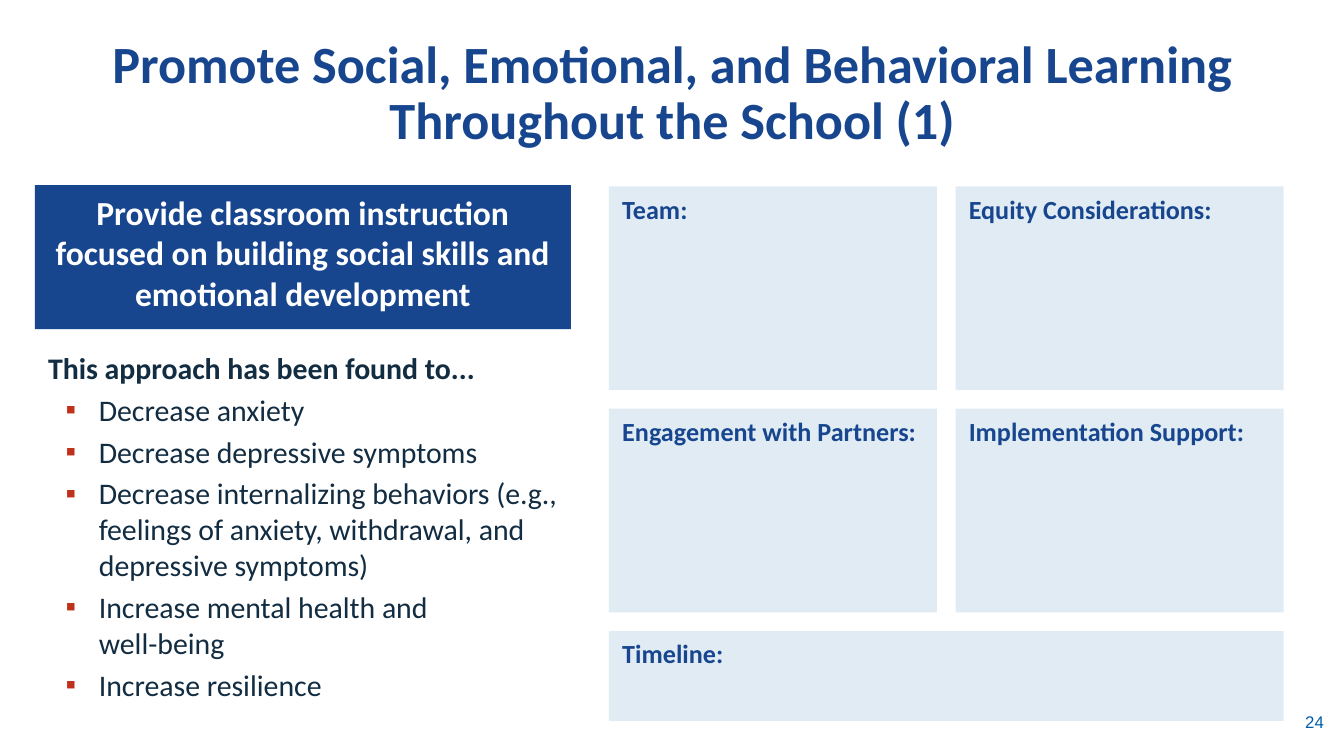
from lxml import etree
from pptx import Presentation
from pptx.dml.color import RGBColor
from pptx.enum.shapes import MSO_SHAPE
from pptx.enum.text import MSO_ANCHOR, PP_ALIGN
from pptx.oxml.ns import qn
from pptx.util import Cm, Pt

RECT = MSO_SHAPE.RECTANGLE
TOP, BOTTOM = MSO_ANCHOR.TOP, MSO_ANCHOR.BOTTOM
LEFT, CENTER, RIGHT = PP_ALIGN.LEFT, PP_ALIGN.CENTER, PP_ALIGN.RIGHT


def color(hex_code):
    return RGBColor.from_string(hex_code)


def write(p, text, size=16, fill="122C41", bold=False, font="Calibri",
          align=LEFT, before=0, spacing=None):
    p.text = text
    p.alignment = align
    p.space_before = Pt(before)
    if spacing:
        p.line_spacing = Pt(spacing)
    for r in p.runs:
        r.font.name, r.font.size, r.font.bold = font, Pt(size), bold
        r.font.color.rgb = color(fill)


class SlideBuilder:
    NAVY, WHITE, RED, SKY, BLUE = "17468F", "FFFFFF", "BF311B", "86B2D7", "015DAA"

    def __init__(self, prs):
        self.slide = prs.slides.add_slide(prs.slide_layouts[6])

    def fill_frame(self, sp, text, anchor=TOP, **fmt):
        tf = sp.text_frame
        tf.word_wrap = True
        tf.vertical_anchor = anchor
        write(tf.paragraphs[0], text, **fmt)
        return tf

    def text(self, x, y, w, h, text, **fmt):
        sp = self.slide.shapes.add_textbox(Cm(x), Cm(y), Cm(w), Cm(h))
        return self.fill_frame(sp, text, **fmt)

    def box(self, x, y, w, h, text, back, opacity=100, **fmt):
        sp = self.slide.shapes.add_shape(RECT, Cm(x), Cm(y), Cm(w), Cm(h))
        sp.shadow.inherit = False
        sp.line.fill.background()
        sp.fill.solid()
        sp.fill.fore_color.rgb = color(back)
        if opacity < 100:
            clr = sp._element.spPr.find(qn("a:solidFill"))[0]
            etree.SubElement(clr, qn("a:alpha"), val=str(opacity * 1000))
        return self.fill_frame(sp, text, **fmt)

    def panel(self, x, y, w, h, label):
        self.box(x, y, w, h, label, self.SKY, opacity=25,
                 size=14, fill=self.NAVY, bold=True)

    def bullet(self, tf, text):
        p = tf.add_paragraph()
        pPr = p._p.get_or_add_pPr()
        pPr.set("marL", str(Cm(0.96)))
        pPr.set("indent", str(Cm(-0.63)))
        bu_clr = etree.SubElement(pPr, qn("a:buClr"))
        etree.SubElement(bu_clr, qn("a:srgbClr"), val=self.RED)
        etree.SubElement(pPr, qn("a:buFont"), typeface="Arial")
        etree.SubElement(pPr, qn("a:buChar"), char="▪")
        write(p, text, before=3.2)


def main():
    prs = Presentation()
    prs.slide_width, prs.slide_height = Cm(25.4), Cm(14.28)
    s = SlideBuilder(prs)

    # Title
    s.text(0.71, 0.56, 23.98, 2.39,
           "Promote Social, Emotional, and Behavioral Learning "
           "Throughout the School (1)",
           anchor=BOTTOM, size=28, fill=s.NAVY, bold=True, align=CENTER,
           spacing=30)

    # Approach banner
    s.box(0.66, 3.5, 10.13, 2.72,
          "Provide classroom instruction focused on building social skills "
          "and emotional development",
          s.NAVY, size=18, fill=s.WHITE, bold=True, align=CENTER)

    # Findings
    findings = s.text(0.66, 6.48, 10.13, 7.14,
                      "This approach has been found to...", bold=True)
    for item in ("Decrease anxiety",
                 "Decrease depressive symptoms",
                 "Decrease internalizing behaviors (e.g., feelings of anxiety, "
                 "withdrawal, and depressive symptoms)",
                 "Increase mental health and \nwell-being",
                 "Increase resilience"):
        s.bullet(findings, item)

    # Planning grid: two rows of two panels, then a full-width one
    left, top, width, height, gap = 11.51, 3.52, 6.2, 3.85, 0.35
    labels = (("Team:", "Equity Considerations:"),
              ("Engagement with Partners:", "Implementation Support:"))
    for row, pair in enumerate(labels):
        for col, label in enumerate(pair):
            s.panel(left + col * (width + gap), top + row * (height + gap),
                    width, height, label)
    s.panel(left, top + 2 * (height + gap), 2 * width + gap, 1.7, "Timeline:")

    # Page number
    s.text(23.09, 13.31, 2.18, 0.76, "24",
           size=9, fill=s.BLUE, font="Arial", align=RIGHT)

    prs.save("out.pptx")


if __name__ == "__main__":
    main()
